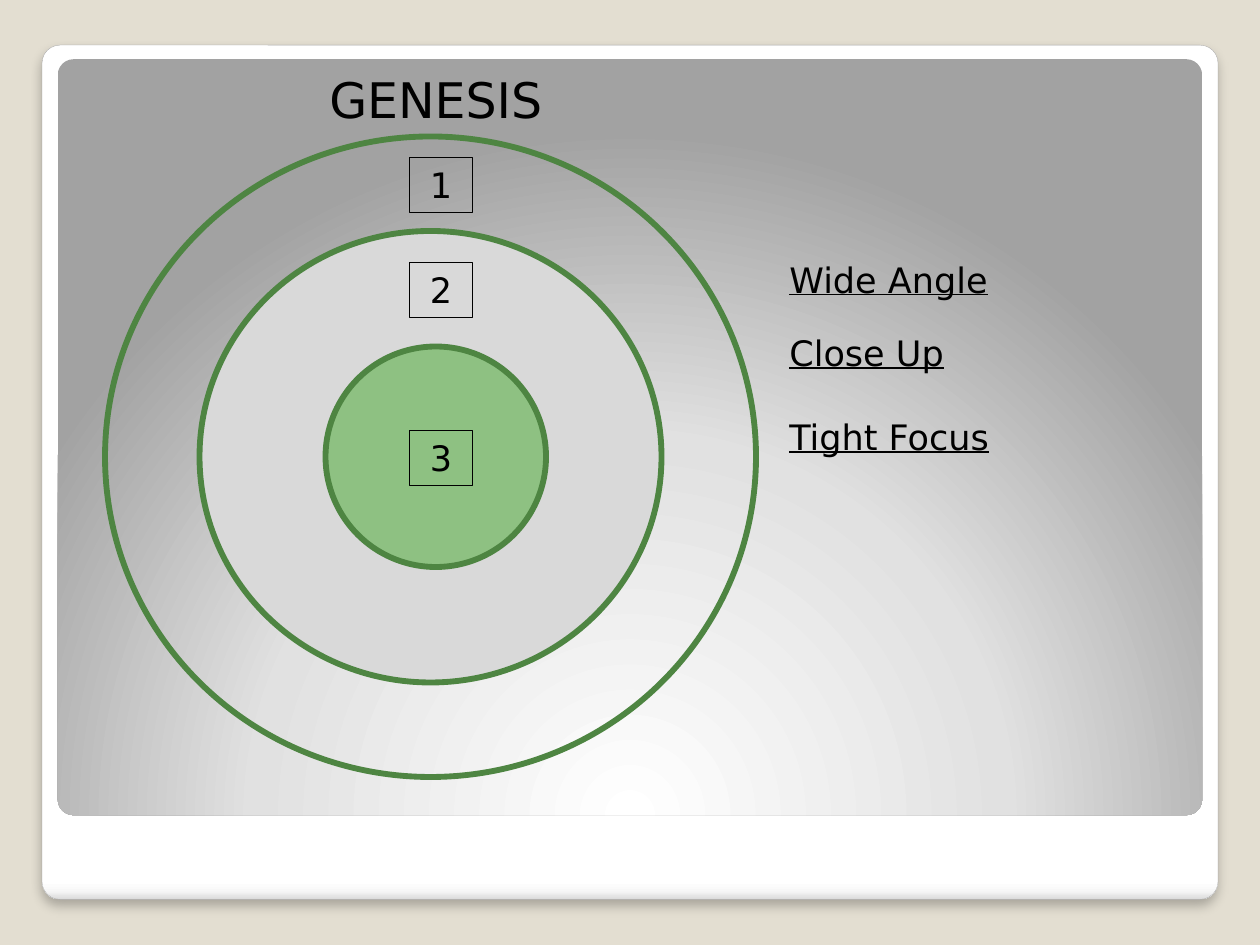
from lxml import etree
from pptx import Presentation
from pptx.dml.color import RGBColor
from pptx.enum.shapes import MSO_SHAPE
from pptx.enum.text import MSO_ANCHOR, MSO_AUTO_SIZE, PP_ALIGN
from pptx.oxml import parse_xml
from pptx.oxml.ns import nsdecls, qn
from pptx.util import Inches, Pt

ROUNDED, ELLIPSE, RECTANGLE = (
    MSO_SHAPE.ROUNDED_RECTANGLE, MSO_SHAPE.OVAL, MSO_SHAPE.RECTANGLE)
TOP = MSO_ANCHOR.TOP
GROW = MSO_AUTO_SIZE.SHAPE_TO_FIT_TEXT
LEFT, CENTER = PP_ALIGN.LEFT, PP_ALIGN.CENTER

BEIGE = RGBColor(0xE3, 0xDE, 0xD1)
FRAME_GRAY = RGBColor(0xA4, 0xA4, 0xA4)
DARK_GREEN = RGBColor(0x4E, 0x85, 0x42)
LIGHT_GREEN = RGBColor(0x8E, 0xC1, 0x82)
LIGHT_GRAY = RGBColor(0xD9, 0xD9, 0xD9)
BLACK = RGBColor(0, 0, 0)
WHITE = RGBColor(0xFF, 0xFF, 0xFF)
FRAME_STOPS = [(0, WHITE), (98, WHITE), (99, RGBColor(0xF7, 0xF7, 0xF7)),
               (100, RGBColor(0xDA, 0xDA, 0xDA))]
PANEL_STOPS = [(0, WHITE), (55, RGBColor(0xE1, 0xE1, 0xE1)),
               (100, RGBColor(0xA2, 0xA2, 0xA2))]
DOWNWARD = '<a:lin ang="5400000" scaled="0"/>'
FROM_BELOW = ('<a:path path="circle"><a:fillToRect l="50000" t="175000" '
              'r="50000" b="-75000"/></a:path>')

FONT = "DejaVu Sans"
CELL = Inches(1) / 12  # the slide is a grid of 120 columns and 90 rows
LABEL_HEIGHT = 5.25


def grid(*cells):
    return [round(cell * CELL) for cell in cells]


def add_outlined(slide, kind, box, fill=None, line=None, width=0.75):
    shape = slide.shapes.add_shape(kind, *grid(*box))
    shape.shadow.inherit = False
    if fill is None:
        shape.fill.background()
    else:
        shape.fill.solid()
        shape.fill.fore_color.rgb = fill
    if line is None:
        shape.line.fill.background()
    else:
        shape.line.color.rgb = line
        shape.line.width = Pt(width)
    return shape


def set_gradient(shape, stops, direction):
    stop_xml = "".join(
        f'<a:gs pos="{position * 1000}"><a:srgbClr val="{color}"/></a:gs>'
        for position, color in stops)
    gradient = parse_xml(f'<a:gradFill {nsdecls("a")} rotWithShape="1">'
                         f'<a:gsLst>{stop_xml}</a:gsLst>{direction}</a:gradFill>')
    properties = shape._element.spPr
    properties.replace(properties.find(qn("a:noFill")), gradient)


def add_soft_shadow(shape):
    effects = shape._element.spPr.find(qn("a:effectLst"))
    shadow = etree.SubElement(effects, qn("a:outerShdw"), blurRad=str(Pt(6)),
                              dist=str(Pt(4)), dir="5400000", algn="tl")
    color = etree.SubElement(shadow, qn("a:srgbClr"), val=str(BLACK))
    etree.SubElement(color, qn("a:alpha"), val="25000")


def write(shape, text, size=20, alignment=LEFT, underline=None):
    frame = shape.text_frame
    frame.word_wrap = True
    frame.auto_size = GROW
    frame.vertical_anchor = TOP
    paragraph = frame.paragraphs[0]
    paragraph.alignment = alignment
    run = paragraph.add_run()
    run.text = text
    font = run.font
    font.name, font.size, font.underline = FONT, Pt(size), underline
    font.color.rgb = BLACK


def add_backdrop(slide, box):
    """Draw the white frame in the box and the gray panel inside it."""
    left, top, width, height = box
    frame = add_outlined(slide, ROUNDED, box, line=FRAME_GRAY, width=0.16)
    set_gradient(frame, FRAME_STOPS, DOWNWARD)
    add_soft_shadow(frame)
    panel = add_outlined(slide, ROUNDED,
                         (left + 1.5, top + 1.34, width - 3, height - 9.36))
    set_gradient(panel, PANEL_STOPS, FROM_BELOW)
    for shape in (frame, panel):
        shape.adjustments[0] = 0.021


def add_rings(slide, box):
    """Draw the three nested circles, the widest one filling the box."""
    left, top, width, height = box
    rings = [(box, None),
             ((left + 9, top + 9, width - 18, height - 18), LIGHT_GRAY),
             ((left + 21, top + 20, 21, 21), LIGHT_GREEN)]
    for ring_box, fill in rings:
        add_outlined(slide, ELLIPSE, ring_box, fill, DARK_GREEN, 3.35)
    for number, row in enumerate((2, 12, 28), start=1):
        tag = add_outlined(slide, RECTANGLE,
                           (left + 29, top + row, 6, LABEL_HEIGHT), line=BLACK)
        write(tag, str(number), alignment=CENTER)


def add_title(slide, box):
    title = slide.shapes.title
    title.left, title.top, title.width, title.height = grid(*box)
    write(title, "GENESIS", size=28, alignment=CENTER)


def add_legend(slide, left, top, width):
    for text, row in (("Wide Angle", 0), ("Close Up", 7), ("Tight Focus", 15)):
        label = slide.shapes.add_textbox(
            *grid(left, top + row, width, LABEL_HEIGHT))
        write(label, text, underline=True)


def main():
    presentation = Presentation()
    presentation.slide_width, presentation.slide_height = Inches(10), Inches(7.5)
    title_only = presentation.slide_layouts[5]
    slide = presentation.slides.add_slide(title_only)
    slide.background.fill.solid()
    slide.background.fill.fore_color.rgb = BEIGE

    add_backdrop(slide, (4, 4.3, 112, 81.36))
    add_rings(slide, (10, 13, 62, 61))
    add_title(slide, (28, 6, 27, 6.84))
    add_legend(slide, 74, 24, 22)
    # The title is created first, so bring it in front of the backdrop.
    slide.shapes._spTree.append(slide.shapes.title._element)
    presentation.save("out.pptx")


if __name__ == "__main__":
    main()
